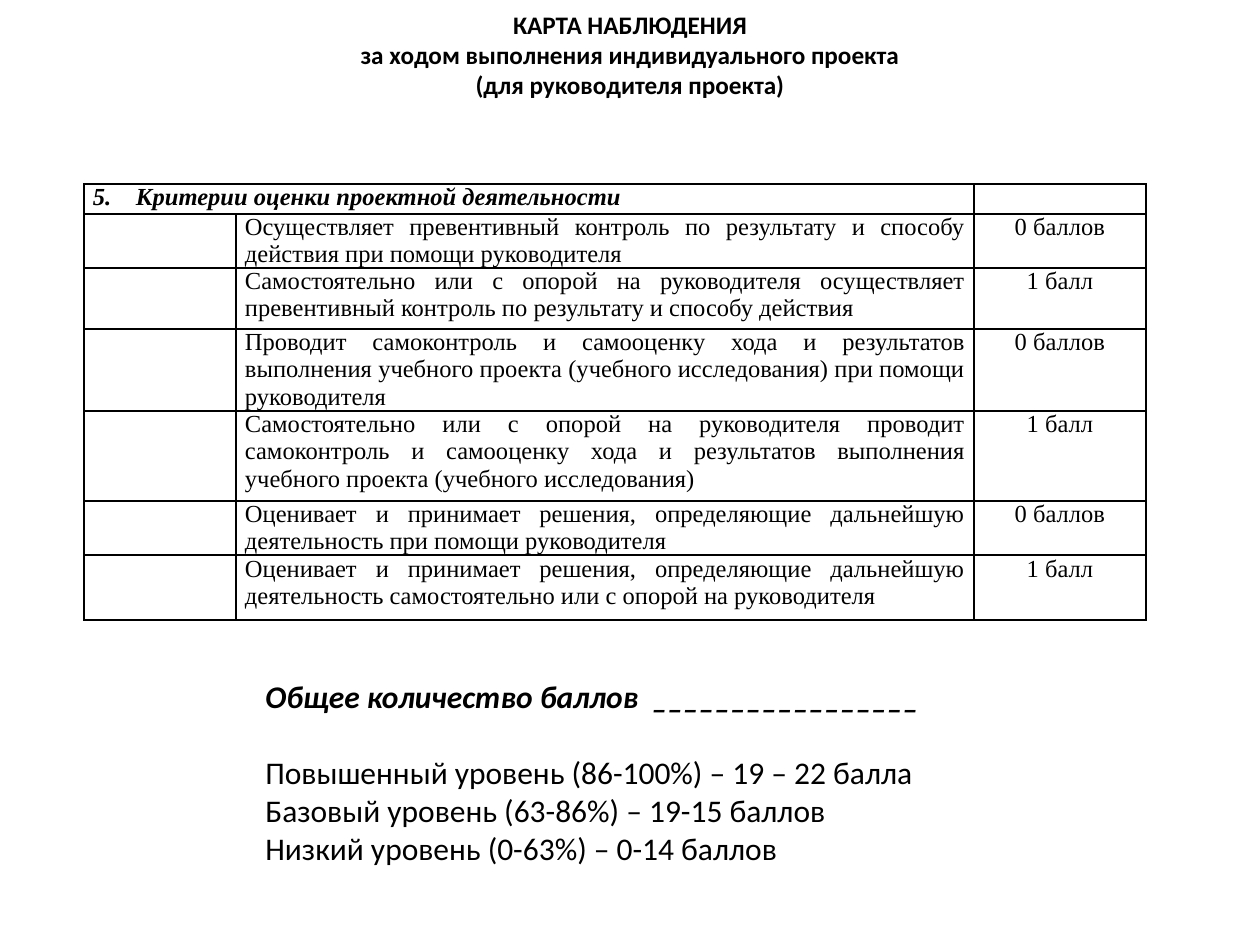
from dataclasses import dataclass

from lxml.etree import SubElement
from pptx import Presentation
from pptx.dml.color import RGBColor
from pptx.enum.text import MSO_ANCHOR as ANCHOR, PP_ALIGN as ALIGN
from pptx.oxml.ns import qn
from pptx.util import Emu, Pt


@dataclass(frozen=True)
class Theme:
    """Colours, fonts and type sizes of the slide."""
    ink: str = "000000"
    sans: str = "Calibri"
    serif: str = "Times New Roman"
    title: float = 14.4
    cell: float = 14
    body: float = 18
    border: float = 1


THEME = Theme()
TITLE = ("КАРТА НАБЛЮДЕНИЯ\vза ходом выполнения индивидуального проекта\v"
         "(для руководителя проекта)")
HEADING = "5.\tКритерии оценки проектной деятельности"
CRITERIA = [
    ("Осуществляет превентивный контроль по результату и способу действия "
     "при помощи руководителя", "0 баллов"),
    ("Самостоятельно или с опорой на руководителя осуществляет превентивный "
     "контроль по результату и способу действия", "1 балл"),
    ("Проводит самоконтроль и самооценку хода и результатов выполнения учебного "
     "проекта (учебного исследования) при помощи руководителя", "0 баллов"),
    ("Самостоятельно или с опорой на руководителя проводит самоконтроль и "
     "самооценку хода и результатов выполнения учебного проекта "
     "(учебного исследования)", "1 балл"),
    ("Оценивает и принимает решения, определяющие дальнейшую деятельность "
     "при помощи руководителя", "0 баллов"),
    ("Оценивает и принимает решения, определяющие дальнейшую деятельность "
     "самостоятельно или с опорой на руководителя", "1 балл"),
]
COLUMNS = [152, 738, 172]
ROWS = [27, 54, 61, 82, 90, 54, 65]
TOTAL = "Общее количество баллов  _________________"
LEVELS = [
    "Повышенный уровень (86-100%) – 19 – 22 балла",
    "Базовый уровень (63-86%) – 19-15 баллов",
    "Низкий уровень (0-63%) – 0-14 баллов",
]


def px(n):
    """Turn whole pixels into EMU at 126 pixels to the inch."""
    return Emu(round(n * 914400 / 126))


def style(p, font, size, bold=False, italic=False):
    """Format every run of a paragraph."""
    for r in p.runs:
        r.font.name, r.font.size = font, Pt(size)
        r.font.bold, r.font.italic = bold, italic
        r.font.color.rgb = RGBColor.from_string(THEME.ink)


def add_title(s, x, y, w, h):
    """Place the three-line title in its placeholder."""
    sp = s.shapes.title
    sp.left, sp.top, sp.width, sp.height = map(px, (x, y, w, h))
    tf = sp.text_frame
    tf.text = TITLE
    tf.vertical_anchor, tf.margin_top = ANCHOR.TOP, px(9)
    p = tf.paragraphs[0]
    p.alignment = ALIGN.CENTER
    style(p, THEME.sans, THEME.title, bold=True)


def set_borders(cell):
    """Give a cell thin solid borders and no fill."""
    pr = cell._tc.get_or_add_tcPr()
    for side in ("lnL", "lnR", "lnT", "lnB"):
        ln = SubElement(pr, qn(f"a:{side}"), w=str(Pt(THEME.border)))
        SubElement(SubElement(ln, qn("a:solidFill")), qn("a:srgbClr"), val=THEME.ink)
    cell.fill.background()


def set_cell(cell, text, alignment, emphasis=False):
    """Write one table cell with its margins, type and borders."""
    cell.margin_left = cell.margin_right = px(9)
    cell.margin_top = cell.margin_bottom = 0
    cell.text = text
    p = cell.text_frame.paragraphs[0]
    p.alignment = alignment
    style(p, THEME.serif, THEME.cell, emphasis, emphasis)
    if not text:
        SubElement(p._p, qn("a:endParaRPr"), sz=str(THEME.cell * 100))
    set_borders(cell)


def add_criteria(s, x, y, columns, rows):
    """Place the criteria table with a merged heading row."""
    frame = s.shapes.add_table(len(rows), len(columns), px(x), px(y),
                               px(sum(columns)), px(sum(rows)))
    table = frame.table
    table.first_row = table.horz_banding = False
    for col, w in zip(table.columns, columns):
        col.width = px(w)
    for row, h in zip(table.rows, rows):
        row.height = px(h)
    content = [(HEADING, "", "")] + [("", *pair) for pair in CRITERIA]
    alignments = (ALIGN.JUSTIFY, ALIGN.JUSTIFY, ALIGN.CENTER)
    for i, texts in enumerate(content):
        for j, (text, alignment) in enumerate(zip(texts, alignments)):
            set_cell(table.cell(i, j), text, alignment, emphasis=i == 0)
    heading = table.cell(0, 0)
    heading.merge(table.cell(0, 1))
    ppr = heading.text_frame.paragraphs[0]._p.get_or_add_pPr()
    ppr.set("marL", str(px(43)))
    ppr.set("indent", str(-px(43)))


def add_summary(s, x, y, w, h):
    """Place the total line and the score levels below it."""
    tf = s.shapes.add_textbox(*map(px, (x, y, w, h))).text_frame
    tf.word_wrap = True
    tf.text = "\n".join([TOTAL, *LEVELS])
    total, *levels = tf.paragraphs
    style(total, THEME.sans, THEME.body, bold=True, italic=True)
    for p in levels:
        style(p, THEME.sans, THEME.body)
    levels[0].space_before = Pt(22)


def main():
    """Build and save the slide."""
    prs = Presentation()
    prs.slide_width, prs.slide_height = px(1260), px(945)
    s = prs.slides.add_slide(prs.slide_layouts[5])
    add_title(s, 63, 0, 1134, 135)
    add_criteria(s, 84, 184, COLUMNS, ROWS)
    add_summary(s, 253, 671, 784, 242)
    prs.save("out.pptx")


if __name__ == "__main__":
    main()
